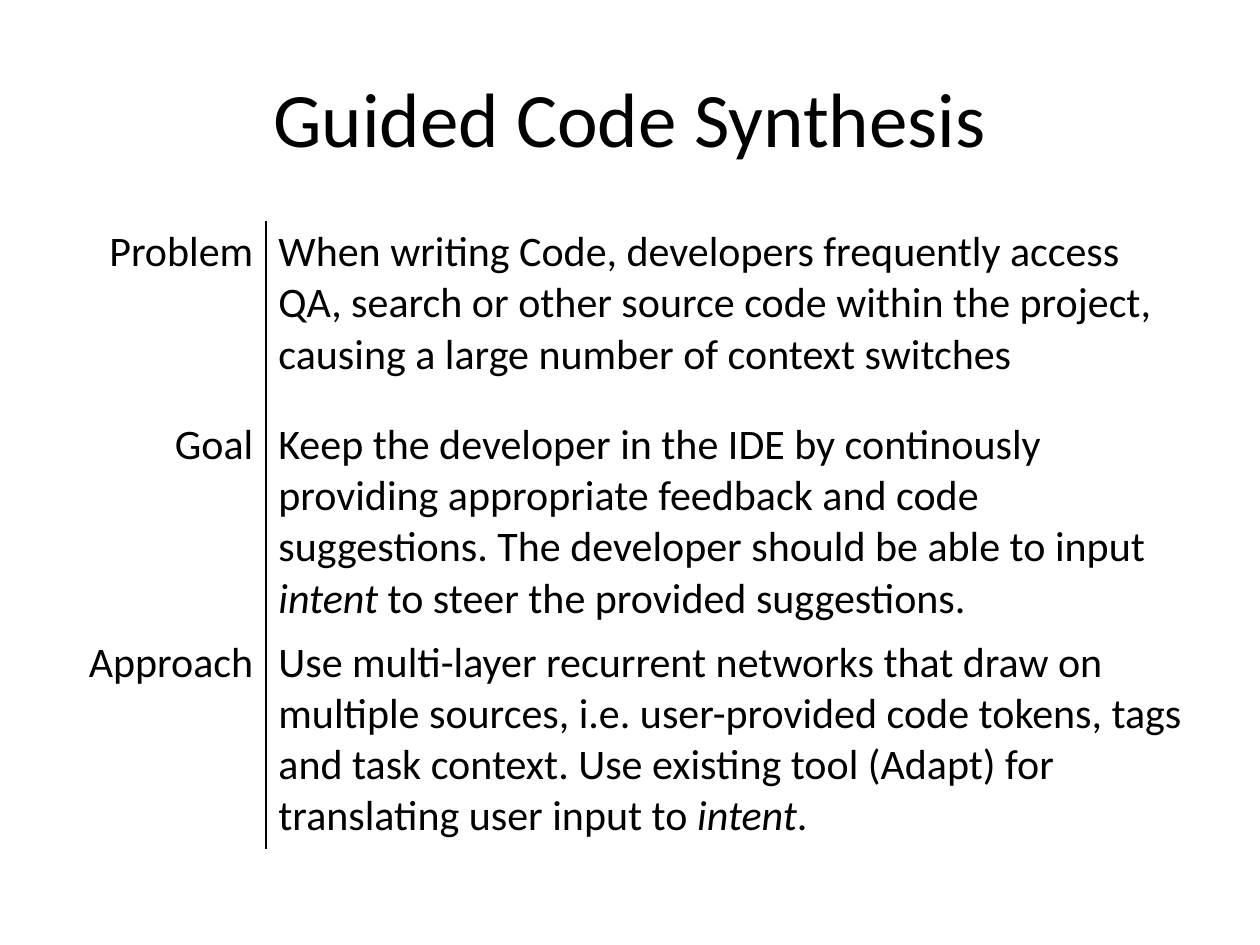
from dataclasses import dataclass

from lxml.etree import SubElement
from pptx import Presentation
from pptx.dml.color import RGBColor as RGB
from pptx.enum.text import MSO_ANCHOR as Anchor, PP_ALIGN as Align
from pptx.oxml import parse_xml
from pptx.oxml.ns import nsdecls, qn
from pptx.util import Inches, Pt


@dataclass(frozen=True)
class Theme:
    font: str = "Calibri"
    ink: str = "000000"
    paper: str = "FFFFFF"
    title_size: int = 44
    body_size: int = 24
    rule_width: int = 1


THEME = Theme()
WIDTH, HEIGHT = Inches(10), Inches(7.5)
MARGIN = 0.05
COLUMNS = (1.61, 7.39)
ROWS = (1.53, 1.09, 0.41)
PLAIN_STYLE = "{2D5ABB26-0587-4C30-8999-92F81FD0307C}"

TOPICS = [
    ("Problem", [
        ("When writing Code, developers frequently access QA, search or other "
         "source code within the project, causing a large number of context "
         "switches", False),
    ]),
    ("Goal", [
        ("Keep the developer in the IDE by continously providing appropriate "
         "feedback and code suggestions. The developer should be able to "
         "input ", False),
        ("intent", True),
        (" to steer the provided suggestions.", False),
    ]),
    ("Approach", [
        ("Use multi-layer recurrent networks that draw on multiple sources, "
         "i.e. user-provided code tokens, tags and task context. Use existing "
         "tool (Adapt) for translating user input to ", False),
        ("intent", True),
        (".", False),
    ]),
]


def share(x, y, w, h):
    return [round(v) for v in (x * WIDTH, y * HEIGHT, w * WIDTH, h * HEIGHT)]


def write(tf, runs, size, align):
    p = tf.paragraphs[0]
    p.alignment = align
    for text, italic in runs:
        r = p.add_run()
        r.text = text
        formats = {"name": THEME.font, "size": Pt(size), "italic": italic}
        for name, value in formats.items():
            setattr(r.font, name, value)
        r.font.color.rgb = RGB.from_string(THEME.ink)


def add_title(s, text):
    sp = s.shapes.title
    sp.left, sp.top, sp.width, sp.height = share(MARGIN, 0.04, 1 - 2 * MARGIN, 1 / 6)
    sp.text_frame.vertical_anchor = Anchor.MIDDLE
    write(sp.text_frame, [(text, False)], THEME.title_size, Align.CENTER)


def add_rule(cell, side):
    line = parse_xml(f'<a:ln{side} {nsdecls("a")} w="{Pt(THEME.rule_width)}"/>')
    fill = SubElement(line, qn("a:solidFill"))
    SubElement(fill, qn("a:srgbClr"), val=THEME.ink)
    cell._tc.get_or_add_tcPr().insert(0, line)


def fill_cell(cell, runs, align, rule_side):
    cell.fill.background()
    write(cell.text_frame, runs, THEME.body_size, align)
    add_rule(cell, rule_side)


def add_topics(s, topics):
    box = share(MARGIN, 7 / 30, 1 - 2 * MARGIN, 0.657)
    frame = s.shapes.add_table(len(topics), len(COLUMNS), *box)
    table = frame.table
    table.first_row = table.horz_banding = False
    table._tbl.tblPr.find(qn("a:tableStyleId")).text = PLAIN_STYLE
    for column, width in zip(table.columns, COLUMNS):
        column.width = Inches(width)
    for row, height, (label, runs) in zip(table.rows, ROWS, topics):
        row.height = Inches(height)
        fill_cell(row.cells[0], [(label, False)], Align.RIGHT, "R")
        fill_cell(row.cells[1], runs, Align.LEFT, "L")
    frame.height = box[3]


def main():
    prs = Presentation()
    prs.slide_width, prs.slide_height = WIDTH, HEIGHT
    s = prs.slides.add_slide(prs.slide_layouts[5])
    s.background.fill.solid()
    s.background.fill.fore_color.rgb = RGB.from_string(THEME.paper)
    add_title(s, "Guided Code Synthesis")
    add_topics(s, TOPICS)
    prs.save("out.pptx")


if __name__ == "__main__":
    main()
